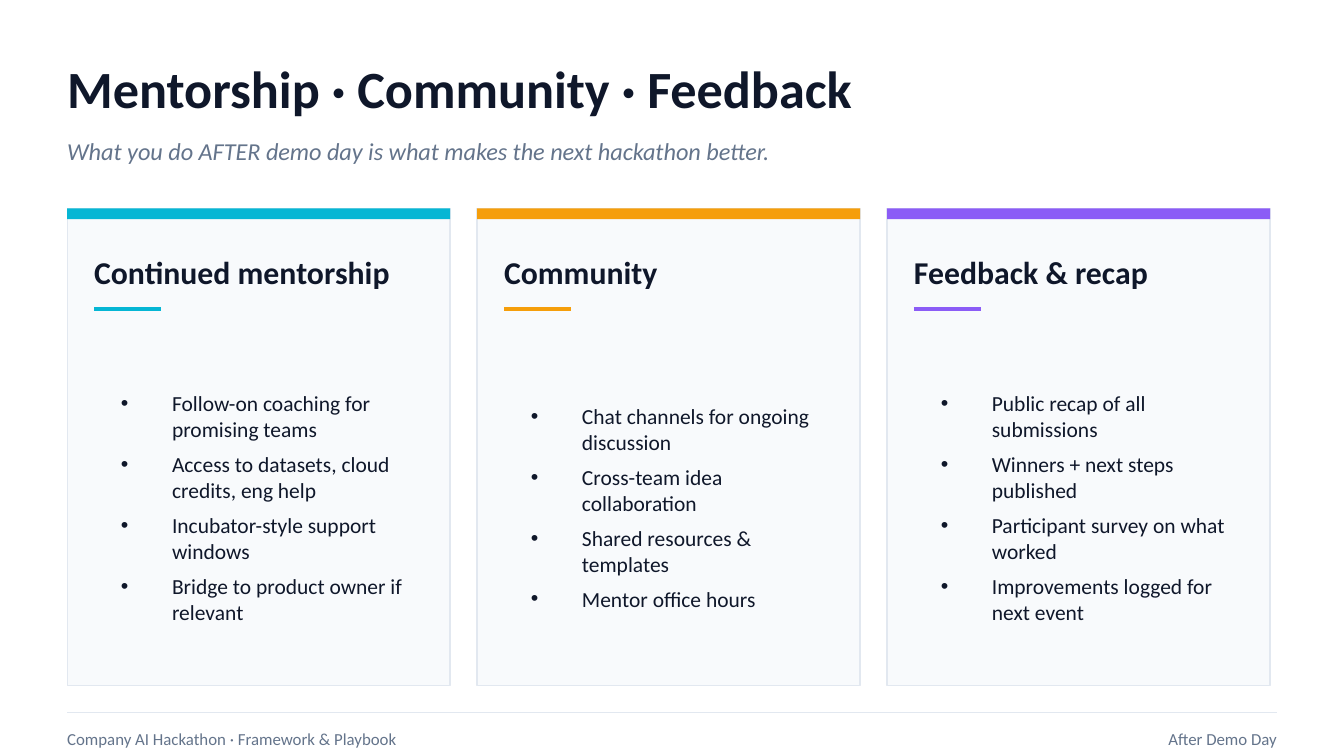
import pptx
import pptx.enum.shapes
import pptx.enum.text
import pptx.oxml.ns
import pptx.util
from lxml import etree
from pptx.dml.color import RGBColor
from pptx.util import Inches

COLORS = {
    "ink": "0F172A", "muted": "64748B", "card": "F8FAFC", "border": "E2E8F0",
    "cyan": "06B6D4", "amber": "F59E0B", "violet": "8B5CF6",
}
CARDS = [
    ("Continued mentorship", "cyan", [
        "Follow-on coaching for promising teams",
        "Access to datasets, cloud credits, eng help",
        "Incubator-style support windows",
        "Bridge to product owner if relevant"]),
    ("Community", "amber", [
        "Chat channels for ongoing discussion",
        "Cross-team idea collaboration",
        "Shared resources & templates",
        "Mentor office hours"]),
    ("Feedback & recap", "violet", [
        "Public recap of all submissions",
        "Winners + next steps published",
        "Participant survey on what worked",
        "Improvements logged for next event"]),
]
LEFT, RIGHT = 0.5, 9.5
CARD_TOP, CARD_WIDTH, CARD_HEIGHT, CARD_STEP = 1.55, 2.85, 3.55, 3.05

deck = pptx.Presentation()
deck.slide_width, deck.slide_height = Inches(10), Inches(5.625)
# The comparison layout offers a title and four body placeholders.
page = deck.slides.add_slide(deck.slide_layouts[4])
title, subtitle, *lists = page.placeholders


def write(lines, left, top, width, height, box=None, size=9, color="muted",
          bold=False, italic=False, align="LEFT", bullets=False):
    """Fill a placeholder, or a new text box, and bring it to the front."""
    if box is None:
        box = page.shapes.add_textbox(0, 0, 0, 0)
    box.left, box.top = Inches(left), Inches(top)
    box.width, box.height = Inches(width), Inches(height)
    box.element.getparent().append(box.element)
    frame = box.text_frame
    frame.word_wrap = True
    frame.auto_size = pptx.enum.text.MSO_AUTO_SIZE.NONE
    frame.vertical_anchor = pptx.enum.text.MSO_ANCHOR.MIDDLE
    if not bullets:
        frame.margin_left = frame.margin_right = 0
        frame.margin_top = frame.margin_bottom = 0
    frame.text = "\n".join(lines)
    for para in frame.paragraphs:
        para.alignment = getattr(pptx.enum.text.PP_ALIGN, align)
        para.space_before = pptx.util.Pt(0)
        para.space_after = pptx.util.Pt(5 if bullets else 0)
        if bullets:
            properties = para._p.get_or_add_pPr()
            properties.set("marL", str(Inches(0.38)))
            properties.set("indent", str(-Inches(0.38)))
            bullet = etree.SubElement(properties, pptx.oxml.ns.qn("a:buChar"))
            bullet.set("char", "•")
        for span in para.runs:
            span.font.name = "Calibri"
            span.font.size = pptx.util.Pt(size)
            span.font.bold, span.font.italic = bold, italic
            span.font.color.rgb = RGBColor.from_string(COLORS[color])


def draw_line(left, right, y, color, weight):
    line = page.shapes.add_connector(
        pptx.enum.shapes.MSO_CONNECTOR.STRAIGHT,
        Inches(left), Inches(y), Inches(right), Inches(y))
    line.line.color.rgb = RGBColor.from_string(COLORS[color])
    line.line.width = pptx.util.Pt(weight)
    etree.SubElement(line.element.spPr, pptx.oxml.ns.qn("a:effectLst"))


write(["Mentorship · Community · Feedback"], LEFT, 0.35, 9, 0.6,
      box=title, size=28, color="ink", bold=True)
write(["What you do AFTER demo day is what makes the next hackathon better."],
      LEFT, 0.95, 9, 0.35, box=subtitle, size=13, italic=True)

for index, (heading, accent, items) in enumerate(CARDS):
    left = LEFT + index * CARD_STEP
    for height, fill in ((CARD_HEIGHT, "card"), (0.08, accent)):
        panel = page.shapes.add_shape(
            pptx.enum.shapes.MSO_SHAPE.RECTANGLE, Inches(left),
            Inches(CARD_TOP), Inches(CARD_WIDTH), Inches(height))
        panel.shadow.inherit = False
        panel.fill.solid()
        panel.fill.fore_color.rgb = RGBColor.from_string(COLORS[fill])
        if fill == "card":
            panel.line.color.rgb = RGBColor.from_string(COLORS["border"])
            panel.line.width = pptx.util.Pt(0.75)
        else:
            panel.line.fill.background()
    write([heading], left + 0.2, 1.75, 2.55, 0.55,
          size=17, color="ink", bold=True)
    draw_line(left + 0.2, left + 0.7, 2.3, accent, 2)
    write(items, left + 0.3, 2.45, 2.45, 2.65,
          box=lists[index], size=11.5, color="ink", bullets=True)

draw_line(LEFT, RIGHT, 5.3, "border", 0.75)
write(["Company AI Hackathon · Framework & Playbook"], LEFT, 5.35, 5.5, 0.3)
write(["After Demo Day"], 6, 5.35, 3.5, 0.3, align="RIGHT")

deck.save("out.pptx")
